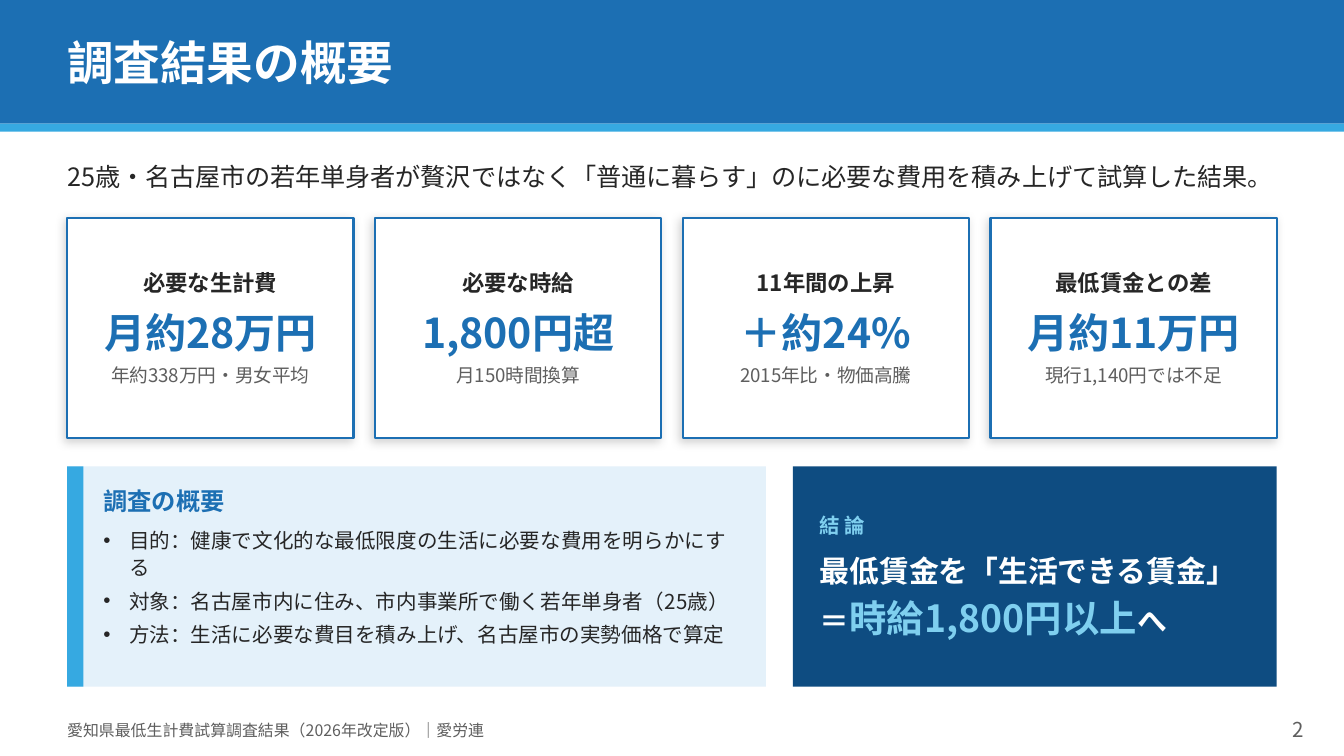
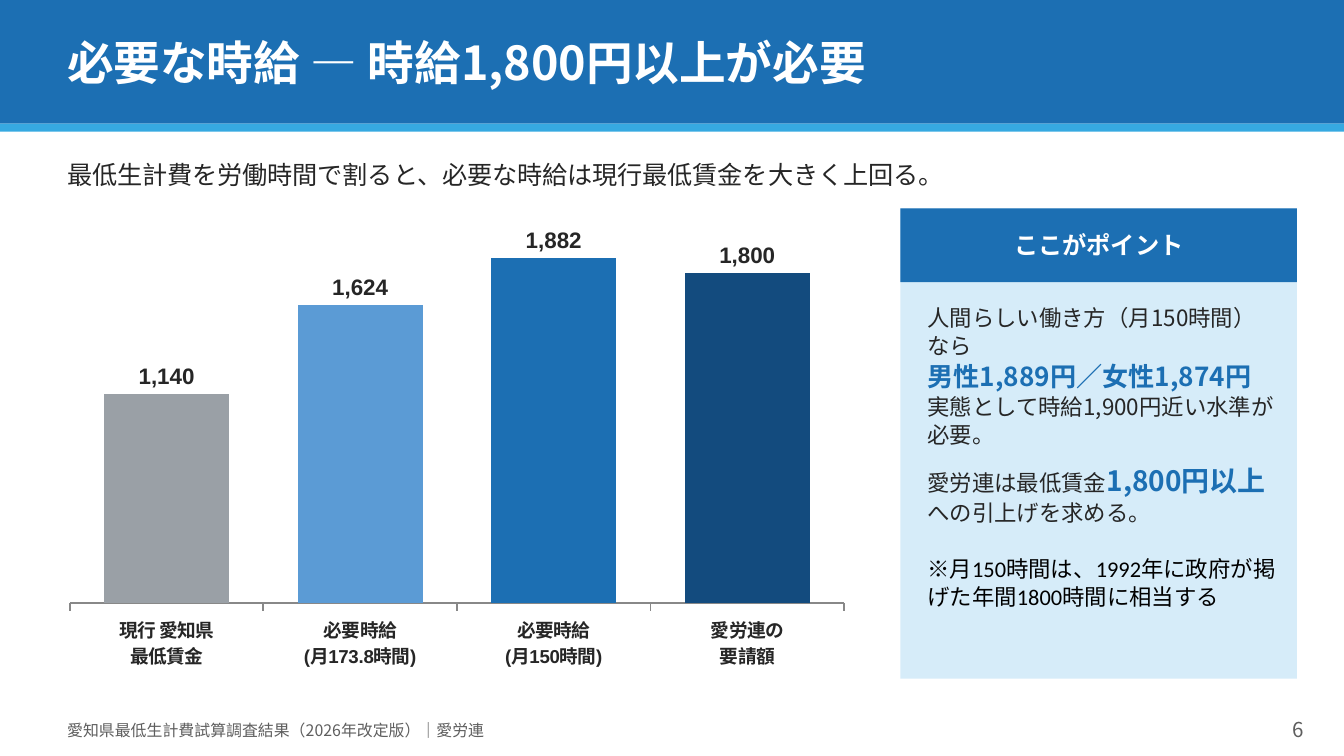
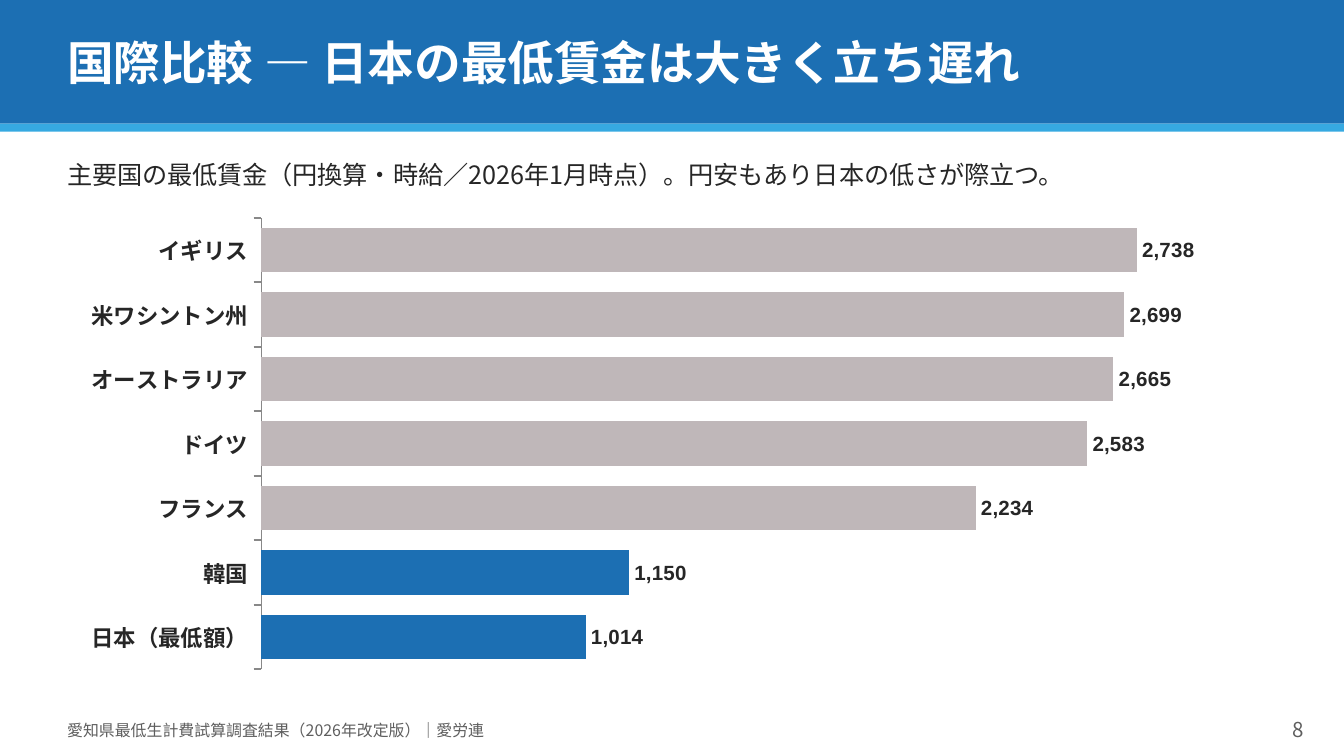
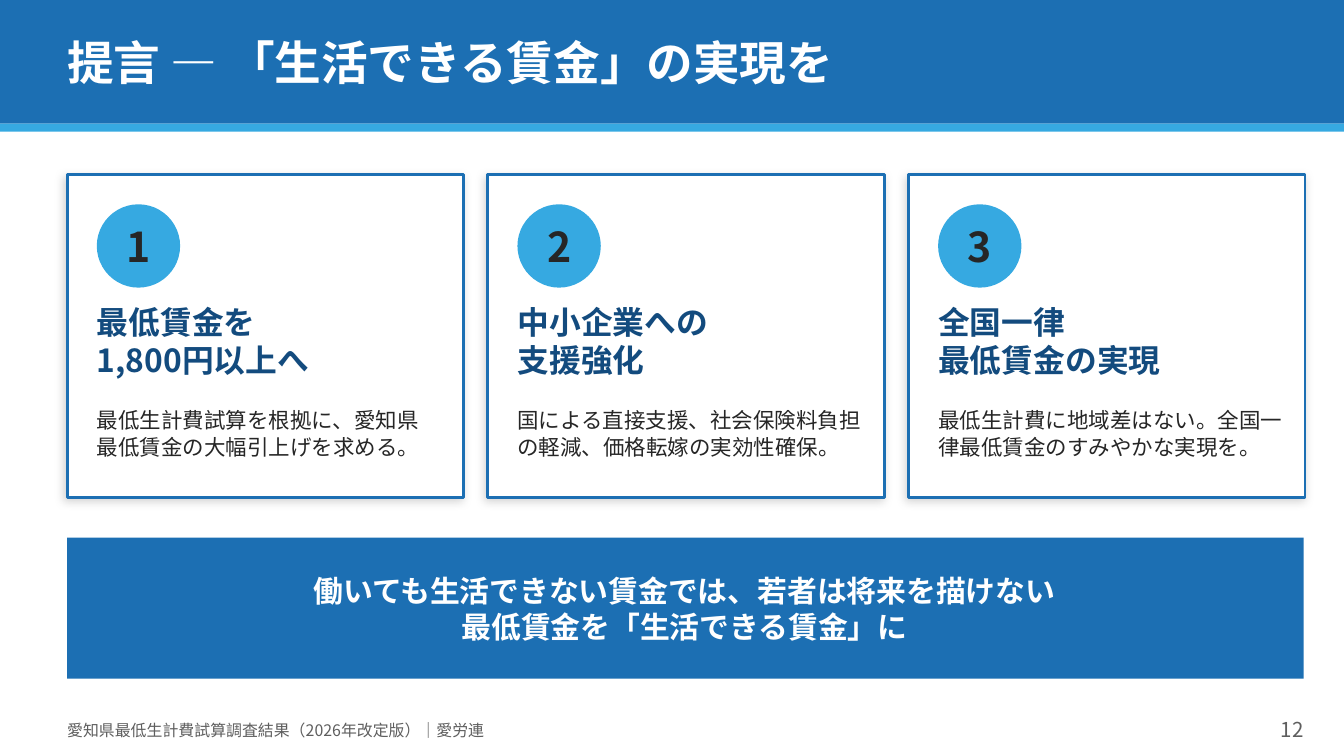
from dataclasses import dataclass

from lxml import etree
from pptx import Presentation
from pptx.chart.data import CategoryChartData
from pptx.dml.color import RGBColor
from pptx.enum import chart as ch, shapes as sh, text as tx
from pptx.oxml import ns
from pptx.util import Inches, Pt


@dataclass(frozen=True)
class Theme:
    font: str = "Noto Sans CJK JP"
    chart_font: str = "Arial"
    plain_font: str = "Calibri"
    blue: str = "1C6FB3"
    sky: str = "36A9E1"
    navy: str = "134B7E"
    deep: str = "0E4C81"
    mid: str = "5B9BD5"
    aqua: str = "7FCFEF"
    pale: str = "E4F1FA"
    light: str = "D6ECF9"
    ink: str = "262626"
    muted: str = "5E5E5E"
    white: str = "FFFFFF"
    black: str = "000000"
    grey: str = "9AA0A6"
    taupe: str = "BFB7B9"
    axis: str = "888888"
    title: float = 25
    figure: float = 22
    emphasis: float = 20
    heading: float = 17
    message: float = 16
    demand: float = 15
    wage: float = 14
    lead: float = 13.5
    subhead: float = 13
    label: float = 12
    body: float = 11.5
    small: float = 11
    caption: float = 10
    footer: float = 8.5


T = Theme()
FOOTER = "愛知県最低生計費試算調査結果（2026年改定版）｜愛労連"
LEFT, MIDDLE, RIGHT = tx.PP_ALIGN.LEFT, tx.PP_ALIGN.CENTER, tx.PP_ALIGN.RIGHT


@dataclass(frozen=True)
class Box:
    left: float
    top: float
    width: float
    height: float

    def lengths(self) -> tuple:
        return tuple(Inches(v) for v in (self.left, self.top, self.width, self.height))


@dataclass(frozen=True)
class Finding:
    label: str
    figure: str
    note: str


@dataclass(frozen=True)
class Proposal:
    heading: tuple[str, str]
    detail: str
    detail_width: float = 2.58


@dataclass(frozen=True)
class Bars:
    kind: ch.XL_CHART_TYPE
    box: Box
    values: dict[str, int]
    colors: list[str]
    gap: int
    maximum: int
    label_size: float
    category_size: float
    category_position: ch.XL_TICK_LABEL_POSITION


FINDINGS = [
    Finding("必要な生計費", "月約28万円", "年約338万円・男女平均"),
    Finding("必要な時給", "1,800円超", "月150時間換算"),
    Finding("11年間の上昇", "＋約24%", "2015年比・物価高騰"),
    Finding("最低賃金との差", "月約11万円", "現行1,140円では不足"),
]
SURVEY_POINTS = [
    "目的：健康で文化的な最低限度の生活に必要な費用を明らかにする",
    "対象：名古屋市内に住み、市内事業所で働く若年単身者（25歳）",
    "方法：生活に必要な費目を積み上げ、名古屋市の実勢価格で算定",
]
PROPOSALS = [
    Proposal(("最低賃金を", "1,800円以上へ"),
             "最低生計費試算を根拠に、愛知県最低賃金の大幅引上げを求める。", 2.51),
    Proposal(("中小企業への", "支援強化"),
             "国による直接支援、社会保険料負担の軽減、価格転嫁の実効性確保。"),
    Proposal(("全国一律", "最低賃金の実現"),
             "最低生計費に地域差はない。全国一律最低賃金のすみやかな実現を。"),
]
HOURLY_WAGES = Bars(
    ch.XL_CHART_TYPE.COLUMN_CLUSTERED, Box(0.4, 1.55, 6, 3.5),
    {"現行 愛知県\n最低賃金": 1140, "必要時給\n(月173.8時間)": 1624,
     "必要時給\n(月150時間)": 1882, "愛労連の\n要請額": 1800},
    [T.grey, T.mid, T.blue, T.navy], 55, 2100, T.label, T.caption,
    ch.XL_TICK_LABEL_POSITION.LOW)
COUNTRIES = Bars(
    ch.XL_CHART_TYPE.BAR_CLUSTERED, Box(0.5, 1.55, 9, 3.5),
    {"日本（最低額）": 1014, "韓国": 1150, "フランス": 2234, "ドイツ": 2583,
     "オーストラリア": 2665, "米ワシントン州": 2699, "イギリス": 2738},
    [T.blue] * 2 + [T.taupe] * 5, 45, 3100, T.small, T.label,
    ch.XL_TICK_LABEL_POSITION.NEXT_TO_AXIS)


def rgb(color: str) -> RGBColor:
    return RGBColor.from_string(color)


def sub(parent, tag: str, **attributes):
    return etree.SubElement(parent, ns.qn(tag), attributes)


def write(frame, text: str, *, size: float, color: str = T.ink, bold: bool = False,
          font: str = T.font, align=LEFT, before: float = 0, line: float = 1,
          bullet: bool = False, tracking: float = 0, same_line: bool = False) -> None:
    """Add a paragraph to the frame, or a run to its last paragraph."""
    paragraph = frame.paragraphs[-1]
    if not same_line:
        if paragraph.runs:
            paragraph = frame.add_paragraph()
        if bullet:
            properties = paragraph._p.get_or_add_pPr()
            properties.set("marL", str(Inches(0.19)))
            properties.set("indent", str(-Inches(0.19)))
            sub(properties, "a:buFont", typeface=T.chart_font)
            sub(properties, "a:buChar", char="•")
        paragraph.alignment = align
        paragraph.space_before = Pt(before)
        paragraph.line_spacing = line
    run = paragraph.add_run()
    run.text = text
    run.font.size, run.font.bold, run.font.name = Pt(size), bold, font
    run.font.color.rgb = rgb(color)
    properties = run._r.get_or_add_rPr()
    sub(properties, "a:ea", typeface=T.font)
    if tracking:
        properties.set("spc", str(int(tracking * 100)))


def prepare(frame, centered: bool = True, inset_x: float = 0, inset_y: float = 0):
    """Set wrapping, anchor and insets, and return the frame."""
    frame.word_wrap = True
    frame.auto_size = tx.MSO_AUTO_SIZE.NONE
    frame.vertical_anchor = tx.MSO_ANCHOR.MIDDLE if centered else tx.MSO_ANCHOR.TOP
    frame.margin_left = frame.margin_right = Inches(inset_x)
    frame.margin_top = frame.margin_bottom = Inches(inset_y)
    return frame


def text_area(slide, box: Box, centered: bool = True):
    return prepare(slide.shapes.add_textbox(*box.lengths()).text_frame, centered)


def block(slide, box: Box, fill: str, kind=sh.MSO_SHAPE.RECTANGLE):
    shape = slide.shapes.add_shape(kind, *box.lengths())
    shape.shadow.inherit = False
    shape.fill.solid()
    shape.fill.fore_color.rgb = rgb(fill)
    shape.line.fill.background()
    return shape


def card(slide, box: Box, border: float):
    """Draw a white, outlined panel with a soft shadow."""
    panel = block(slide, box, T.white)
    panel.line.color.rgb = rgb(T.blue)
    panel.line.width = Pt(border)
    effects = panel._element.spPr.find(ns.qn("a:effectLst"))
    shadow = sub(effects, "a:outerShdw", blurRad=str(Pt(5)), dist=str(Pt(2)),
                 dir=str(135 * 60000), algn="bl", rotWithShape="0")
    sub(sub(shadow, "a:srgbClr", val=T.black), "a:alpha", val="16000")
    return panel


def start_slide(deck, heading: str, number: int, lead: str = "", lead_top: float = 1.1):
    slide = deck.slides.add_slide(deck.slide_layouts[5])
    block(slide, Box(0, 0, 10, 0.92), T.blue)
    block(slide, Box(0, 0.92, 10, 0.06), T.sky)
    title = slide.shapes.title
    slide.shapes.element.append(title.element)  # in front of the band
    title.left, title.top, title.width, title.height = Box(0.5, 0, 9, 0.92).lengths()
    write(prepare(title.text_frame), heading, size=T.title, color=T.white, bold=True)
    if lead:
        write(text_area(slide, Box(0.5, lead_top, 9.08, 0.4)), lead, size=T.lead)
    write(text_area(slide, Box(0.5, 5.28, 7.5, 0.3)), FOOTER, size=T.footer, color=T.muted)
    write(text_area(slide, Box(9.1, 5.28, 0.6, 0.3)), str(number), size=T.small,
          color=T.muted, align=RIGHT)
    return slide


def style_font(font, size: float, color: str = T.ink, name: str = T.chart_font,
               bold: bool = True) -> None:
    font.size, font.name, font.bold = Pt(size), name, bold
    font.color.rgb = rgb(color)


def draw_bars(slide, bars: Bars) -> None:
    data = CategoryChartData(number_format="#,##0")
    data.categories = list(bars.values)
    data.add_series("Series 1", list(bars.values.values()))
    chart = slide.shapes.add_chart(bars.kind, *bars.box.lengths(), data).chart
    chart.has_legend = chart.has_title = False
    style_font(chart.font, T.caption, T.black, T.plain_font, False)

    scale = chart.value_axis
    scale.minimum_scale, scale.maximum_scale = 0, bars.maximum
    scale.has_major_gridlines = scale.visible = False
    names = chart.category_axis
    names.has_major_gridlines = False
    names.major_tick_mark = ch.XL_TICK_MARK.OUTSIDE
    names.tick_label_position = bars.category_position
    names.format.line.color.rgb = rgb(T.axis)
    names.format.line.width = Pt(1)
    style_font(names.tick_labels.font, bars.category_size)

    plot = chart.plots[0]
    plot.gap_width, plot.vary_by_categories = bars.gap, False
    wages = plot.series[0]
    wages.format.fill.solid()
    wages.format.fill.fore_color.rgb = rgb(bars.colors[0])
    for index, color in enumerate(bars.colors):
        fill = wages.points[index].format.fill
        fill.solid()
        fill.fore_color.rgb = rgb(color)
    labels = wages.data_labels
    labels.show_value = True
    labels.number_format, labels.number_format_is_linked = "#,##0", False
    labels.position = ch.XL_LABEL_POSITION.OUTSIDE_END
    style_font(labels.font, bars.label_size)


def overview_slide(deck) -> None:
    slide = start_slide(
        deck, "調査結果の概要", 2,
        "25歳・名古屋市の若年単身者が贅沢ではなく「普通に暮らす」のに必要な費用を積み上げて試算した結果。",
        lead_top=1.11)
    for column, finding in enumerate(FINDINGS):
        panel = card(slide, Box(0.5 + column * 2.29, 1.62, 2.13, 1.64), 1.25)
        frame = prepare(panel.text_frame, inset_x=0.1, inset_y=0.1)
        write(frame, finding.label, size=T.label, bold=True, align=MIDDLE)
        write(frame, finding.figure, size=T.figure, color=T.blue, bold=True,
              align=MIDDLE, before=6)
        write(frame, finding.note, size=T.caption, color=T.muted, align=MIDDLE, before=4)

    block(slide, Box(0.5, 3.47, 5.2, 1.64), T.pale)
    block(slide, Box(0.5, 3.47, 0.12, 1.64), T.sky)
    survey = text_area(slide, Box(0.77, 3.62, 4.73, 1.34), centered=False)
    write(survey, "調査の概要", size=T.subhead, color=T.blue, bold=True)
    for index, point in enumerate(SURVEY_POINTS):
        write(survey, point, size=T.small, bullet=True, line=1.12, before=3 if index else 5)

    panel = block(slide, Box(5.9, 3.47, 3.6, 1.64), T.deep)
    conclusion = prepare(panel.text_frame, inset_x=0.2, inset_y=0.1)
    write(conclusion, "結論", size=T.small, color=T.aqua, bold=True, tracking=2)
    write(conclusion, "最低賃金を「生活できる賃金」", size=T.message, color=T.white,
          bold=True, line=1.15, before=5)
    write(conclusion, "＝", size=T.message, color=T.white, bold=True, line=1.15)
    write(conclusion, "時給1,800円以上", size=T.emphasis, color=T.aqua, bold=True,
          same_line=True)
    write(conclusion, "へ", size=T.message, color=T.white, bold=True, same_line=True)


def hourly_wage_slide(deck) -> None:
    slide = start_slide(deck, "必要な時給 — 時給1,800円以上が必要", 6,
                        "最低生計費を労働時間で割ると、必要な時給は現行最低賃金を大きく上回る。")
    draw_bars(slide, HOURLY_WAGES)
    header = Box(6.7, 1.55, 2.95, 0.55)
    block(slide, Box(6.7, 1.55, 2.95, 3.5), T.light)
    block(slide, header, T.blue)
    write(text_area(slide, header), "ここがポイント", size=T.subhead, color=T.white,
          bold=True, align=MIDDLE)
    points = text_area(slide, Box(6.9, 2.25, 2.6, 2.7), centered=False)
    write(points, "人間らしい働き方（月150時間）なら", size=T.label, line=1.05)
    write(points, "男性1,889円／女性1,874円", size=T.wage, color=T.blue, bold=True,
          line=1.05)
    write(points, "実態として時給1,900円近い水準が必要。", size=T.label, line=1.05)
    write(points, "愛労連は最低賃金", size=T.label, line=1.05, before=7.5)
    write(points, "1,800円以上", size=T.demand, color=T.blue, bold=True, same_line=True)
    write(points, "への引上げを求める。", size=T.label, same_line=True)
    write(points, "※月150時間は、1992年に政府が掲げた年間1800時間に相当する", size=T.label,
          color=T.black, font=T.plain_font, line=1.05, before=15)


def countries_slide(deck) -> None:
    slide = start_slide(
        deck, "国際比較 — 日本の最低賃金は大きく立ち遅れ", 8,
        "主要国の最低賃金（円換算・時給／2026年1月時点）。円安もあり日本の低さが際立つ。")
    draw_bars(slide, COUNTRIES)


def proposals_slide(deck) -> None:
    slide = start_slide(deck, "提言 — 「生活できる賃金」の実現を", 12)
    for column, proposal in enumerate(PROPOSALS):
        left = 0.5 + column * 3.13
        inner = left + 0.22
        card(slide, Box(left, 1.3, 2.95, 2.4), 1.5)
        badge = Box(inner, 1.52, 0.62, 0.62)
        block(slide, badge, T.sky, sh.MSO_SHAPE.OVAL)
        write(text_area(slide, badge), str(column + 1), size=T.figure, bold=True,
              align=MIDDLE)
        heading = text_area(slide, Box(inner, 2.25, 2.51, 0.85), centered=False)
        for words in proposal.heading:
            write(heading, words, size=T.heading, color=T.navy, bold=True)
        detail = Box(inner, 3.02, proposal.detail_width, 0.6)
        write(text_area(slide, detail, centered=False), proposal.detail, size=T.body,
              line=1.05)

    block(slide, Box(0.5, 4, 9.2, 1.05), T.blue)
    appeal = text_area(slide, Box(0.7, 4, 8.79, 1.05))
    for words in ("働いても生活できない賃金では、若者は将来を描けない",
                  "最低賃金を「生活できる賃金」に"):
        write(appeal, words, size=T.message, color=T.white, bold=True, align=MIDDLE)


def main() -> None:
    deck = Presentation()
    deck.slide_width, deck.slide_height = Inches(10), Inches(10 * 9 / 16)
    for build in (overview_slide, hourly_wage_slide, countries_slide, proposals_slide):
        build(deck)
    deck.save("out.pptx")


if __name__ == "__main__":
    main()
